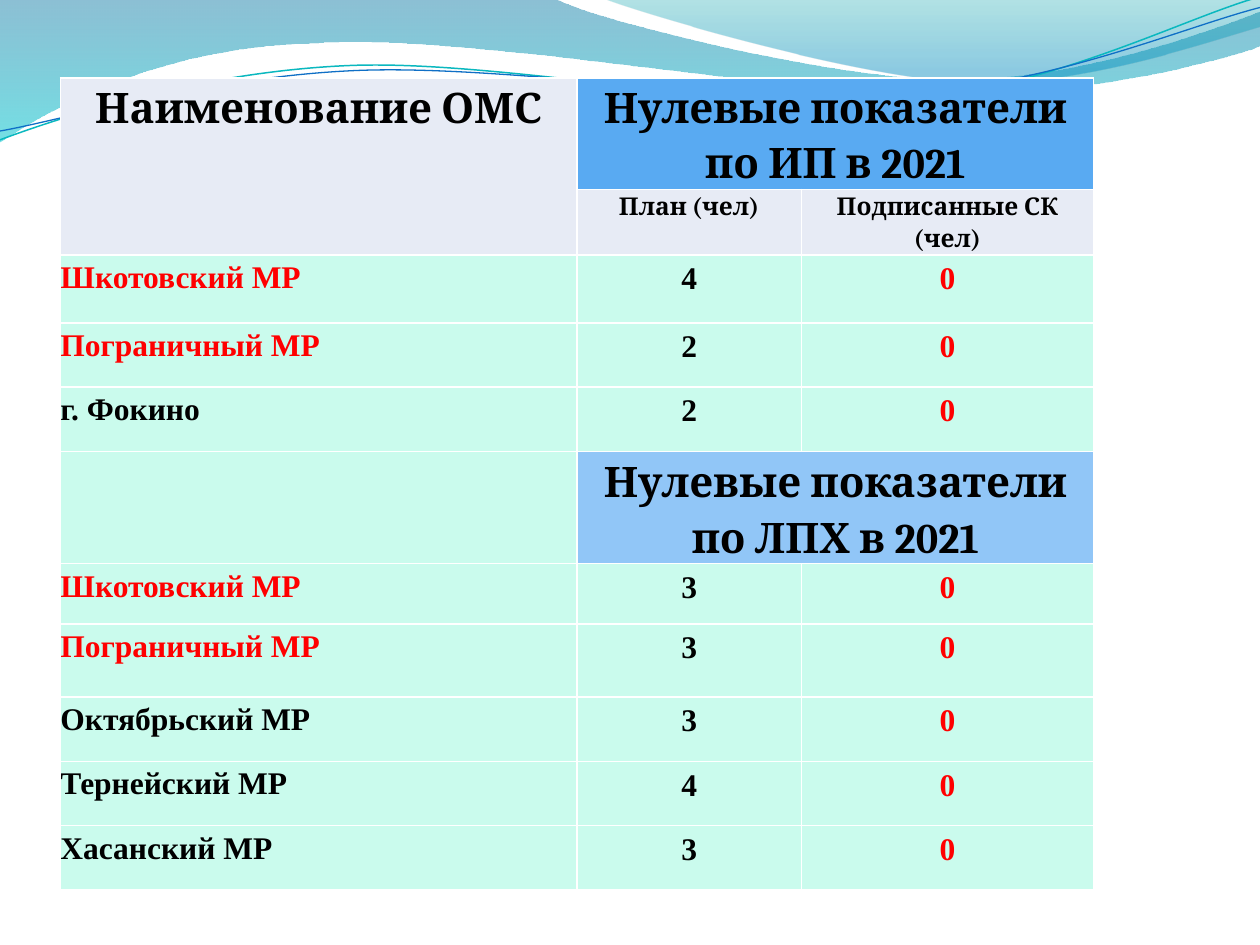
import math

import lxml.etree
import pptx
import pptx.dml.color
import pptx.enum.text
import pptx.oxml
import pptx.oxml.ns
import pptx.util

Inches = pptx.util.Inches
Pt = pptx.util.Pt
qn = pptx.oxml.ns.qn

HUES = {
    "deep": "0074A1", "aqua": "00C6CF", "teal": "00A1A9", "blue": "008BBF",
    "cyan": "0AB8BF", "navy": "0F6FC6", "white": "FFFFFF", "black": "000000",
    "red": "FF0000", "gray": "E7EBF5", "sky": "59AAF2", "pale": "91C6F7",
    "mint": "CAFBED",
}
COLS = [4.1, 1.78, 2.32]
ROWS = [0.8, 0.52, 0.54, 0.51, 0.51, 0.61, 0.48, 0.58, 0.51, 0.51, 0.51]
PLANS = {
    2: [("Шкотовский МР", "4", "red"), ("Пограничный МР", "2", "red"),
        ("г. Фокино", "2", "black")],
    6: [("Шкотовский МР", "3", "red"), ("Пограничный МР", "3", "red"),
        ("Октябрьский МР", "3", "black"), ("Тернейский МР", "4", "black"),
        ("Хасанский МР", "3", "black")],
}
WAVES = [
    ([[(0, 0)], [(4.4, -0.01)],
      [(4.76, 0.17), (6.64, 0.63), (7.58, 0.63)],
      [(8.53, 0.63), (9.58, 0.26), (10, 0.09)], [(10.01, 0.36)],
      [(9.83, 0.44), (8.7, 0.76), (7.46, 0.75)],
      [(6.22, 0.75), (3.82, 0.28), (2.57, 0.34)],
      [(1.29, 0.36), (0.46, 0.83), (-0.01, 1.13)], [(0, 0)]],
     [(0, "deep", 45), (1, "aqua", 55)]),
    ([[(4.79, -0.01)], [(5.09, 0.11), (6.82, 0.62), (7.69, 0.65)],
      [(8.56, 0.69), (9.61, 0.32), (10, 0.21)], [(10, 0)], [(4.79, -0.01)]],
     [(0, "teal", 30), (0.8, "blue", 45)]),
]
TILT = -2.7
LINES = [
    ([[(0, 1.11)], [(0.48, 0.93), (1.58, 0.57), (2.77, 0.52)],
      [(3.95, 0.47), (5.93, 0.89), (7.13, 0.8)],
      [(8.33, 0.71), (9.38, 0.15), (9.98, -0.02)]],
     (4.99, 0.58), "cyan", 0.85),
    ([[(0, 1.04)], [(0.47, 0.96), (1.64, 0.61), (2.83, 0.56)],
      [(4.03, 0.51), (5.97, 0.84), (7.17, 0.75)],
      [(8.36, 0.67), (9.41, 0.21), (10, 0.06)]],
     (5, 0.59), "navy", 0.75),
]


def tint(name):
    return pptx.dml.color.RGBColor.from_string(HUES[name])


def turn(point, mid, angle):
    x, y = point[0] - mid[0], point[1] - mid[1]
    cos, sin = math.cos(math.radians(angle)), math.sin(math.radians(angle))
    return mid[0] + x * cos - y * sin, mid[1] + x * sin + y * cos


def bend(shape, parts):
    nodes = list(shape.element.iter(qn("a:lnTo")))
    for part in parts[1:]:
        group, nodes = nodes[:len(part)], nodes[len(part):]
        if len(part) == 3:
            curve = pptx.oxml.parse_xml(
                f'<a:cubicBezTo {pptx.oxml.ns.nsdecls("a")}/>')
            group[0].addprevious(curve)
            for node in group:
                curve.append(node[0])
                node.getparent().remove(node)


def outline(shapes, parts, left, top, close):
    points = [(Inches(left + x), Inches(top + y))
              for part in parts for x, y in part]
    pen = shapes.build_freeform(*points[0])
    pen.add_line_segments(points[1:], close=close)
    shape = pen.convert_to_shape()
    bend(shape, parts)
    shape.shadow.inherit = False
    return shape


def add_waves(slide, left, top):
    for parts, stops in WAVES:
        shape = outline(slide.shapes, parts, left, top, True)
        shape.line.fill.background()
        shape.fill.gradient()
        shape.fill.gradient_angle = 270
        for stop, (place, name, _) in zip(shape.fill.gradient_stops, stops):
            stop.position = place
            stop.color.rgb = tint(name)
        for hue, (_, _, alpha) in zip(shape.element.iter(qn("a:srgbClr")), stops):
            lxml.etree.SubElement(hue, qn("a:alpha")).set("val", str(alpha * 1000))
    group = slide.shapes.add_group_shape()
    for parts, mid, name, width in LINES:
        level = [[turn(point, mid, -TILT) for point in part] for part in parts]
        shape = outline(group.shapes, level, left, top, False)
        shape.rotation = TILT
        shape.fill.background()
        shape.line.color.rgb = tint(name)
        shape.line.width = Pt(width)


def edge(cell):
    props = cell._tc.get_or_add_tcPr()
    for place, side in enumerate(("lnL", "lnR", "lnT", "lnB")):
        line = pptx.oxml.parse_xml(
            f'<a:{side} {pptx.oxml.ns.nsdecls("a")} w="{Pt(1)}"><a:solidFill>'
            f'<a:srgbClr val="{HUES["white"]}"/></a:solidFill></a:{side}>')
        props.insert(place, line)


def write(cell, text, size, face, hue, inset=0, center=True):
    cell.margin_left = cell.margin_right = cell.margin_top = Inches(inset)
    cell.margin_bottom = 0
    cell.text = text
    para = cell.text_frame.paragraphs[0]
    para.line_spacing = 1.15
    if center:
        para.alignment = pptx.enum.text.PP_ALIGN.CENTER
    para.font.size = Pt(size)
    para.font.name = face
    para.font.bold = True
    para.font.color.rgb = tint(hue)


def shade(cell, name):
    cell.fill.solid()
    cell.fill.fore_color.rgb = tint(name)


def add_grid(slide, left, top, width, height):
    frame = slide.shapes.add_table(len(ROWS), len(COLS), Inches(left),
                                   Inches(top), Inches(width), Inches(height))
    grid = frame.table
    for col, size in zip(grid.columns, COLS):
        col.width = Inches(size)
    for row, size in zip(grid.rows, ROWS):
        row.height = Inches(size)
    frame.width, frame.height = Inches(width), Inches(height)
    for r in range(len(ROWS)):
        for c in range(len(COLS)):
            shade(grid.cell(r, c), "gray" if r < 2 else "mint")
            edge(grid.cell(r, c))

    grid.cell(0, 0).merge(grid.cell(1, 0))
    write(grid.cell(0, 0), "Наименование ОМС", 24, "Cambria", "black")
    heads = [(0, "Нулевые показатели по ИП в 2021", "sky", 0),
             (5, "Нулевые показатели по ЛПХ в 2021", "pale", 0.01)]
    for r, text, name, inset in heads:
        grid.cell(r, 1).merge(grid.cell(r, 2))
        shade(grid.cell(r, 1), name)
        write(grid.cell(r, 1), text, 24, "Cambria", "black", inset)
    for c, text in enumerate(("План (чел)", "Подписанные СК (чел)"), 1):
        write(grid.cell(1, c), text, 14, "Cambria", "black")

    face = "Times New Roman"
    for first, rows in PLANS.items():
        for r, (area, plan, hue) in enumerate(rows, first):
            write(grid.cell(r, 0), area, 18, face, hue, center=False)
            write(grid.cell(r, 1), plan, 18, face, "black", 0.01)
            write(grid.cell(r, 2), "0", 18, face, "red", 0.01)


def main():
    deck = pptx.Presentation()
    deck.slide_width = Inches(10)
    deck.slide_height = Inches(7.5)
    slide = deck.slides.add_slide(deck.slide_layouts[6])
    add_waves(slide, 0, 0)
    add_grid(slide, 0.48, 0.62, 8.19, 6.52)
    deck.save("out.pptx")


if __name__ == "__main__":
    main()
